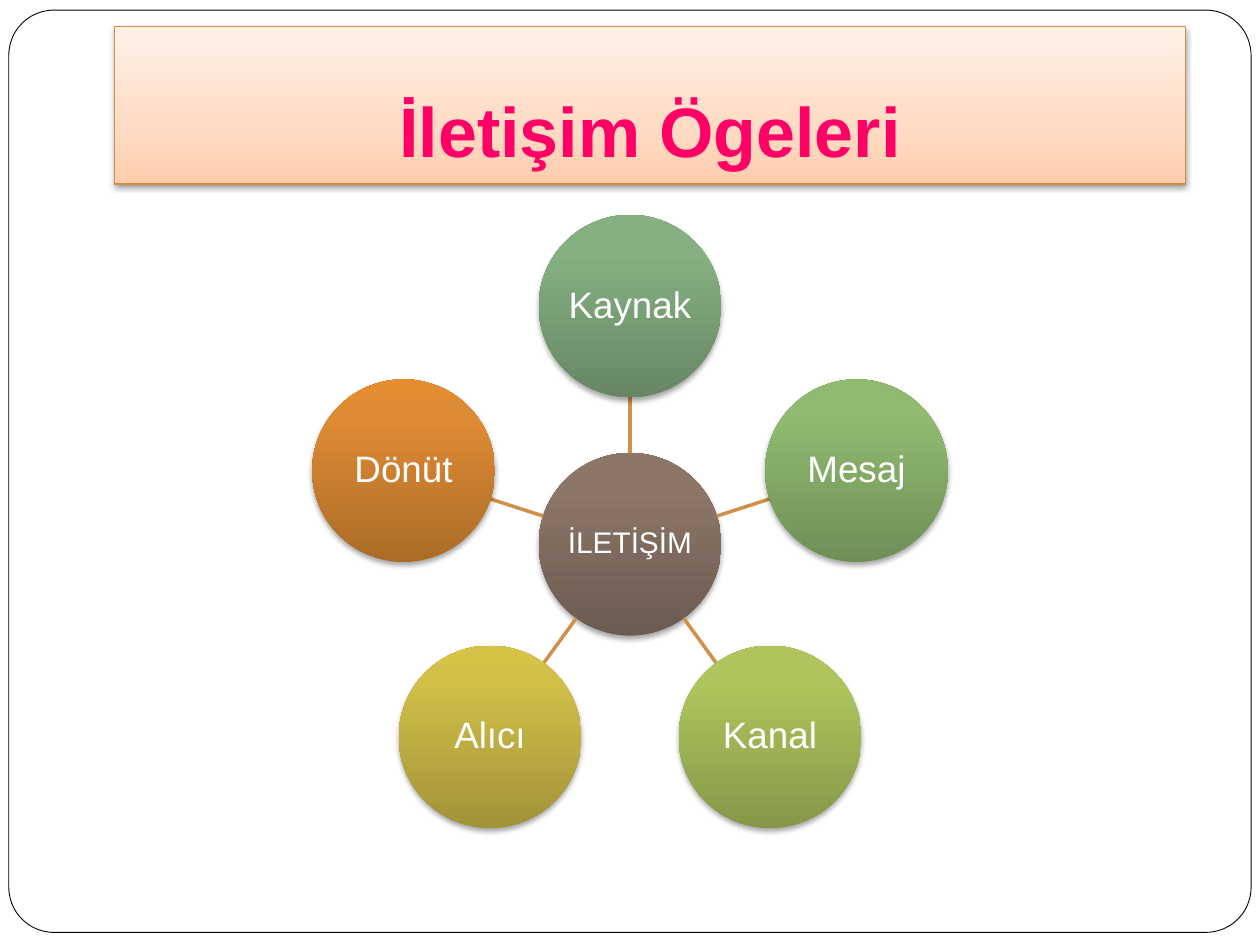
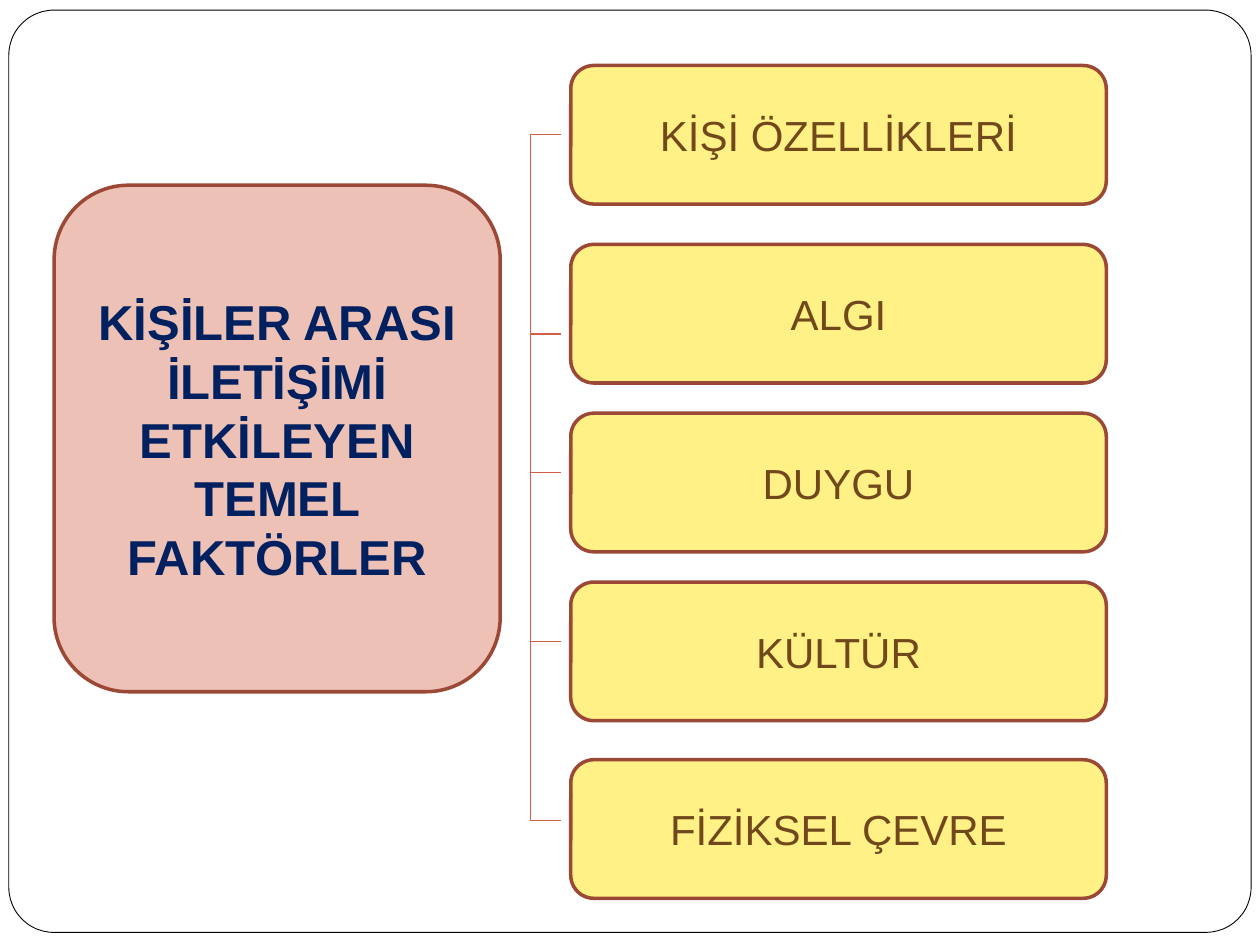
from copy import deepcopy
from dataclasses import dataclass
from math import cos, radians, sin

from lxml.etree import SubElement
from pptx import Presentation
from pptx.dml.color import RGBColor
from pptx.enum.shapes import MSO_CONNECTOR, MSO_SHAPE
from pptx.enum.text import MSO_ANCHOR, PP_ALIGN
from pptx.oxml.ns import qn
from pptx.util import Inches, Pt


@dataclass(frozen=True)
class Theme:
    font: str = "Arial"
    white: str = "FFFFFF"
    frame_line: str = "000000"
    shadow: str = "000000"
    title_text: str = "FF0066"
    title_line: str = "D08D44"
    title_fill: tuple = ((0, "FFCDAC"), (0.35, "FFDBC4"), (1, "FFF1E8"))
    hub_fill: tuple = ((0, "6C5B50"), (0.8, "8C7668"), (1, "8D7768"))
    spoke: str = "D19049"
    topic_fill: str = "EDC1B6"
    topic_text: str = "002060"
    factor_fill: str = "FFF185"
    factor_text: str = "71481C"
    box_line: str = "9B4936"
    bracket: str = "D05F44"
    title_size: int = 40
    topic_size: int = 28
    factor_size: int = 24
    element_size: int = 21
    hub_size: int = 17
    thin: float = 0.5
    fine: float = 0.75
    thick: float = 2


THEME = Theme()

# Clockwise from the top
ELEMENTS = [
    ("Kaynak", ((0, "678764"), (0.8, "86B082"), (1, "86B182"))),
    ("Mesaj", ((0, "6F8F56"), (0.8, "90BA70"), (1, "90BC6F"))),
    ("Kanal", ((0, "869848"), (0.8, "AEC55D"), (1, "B0C85B"))),
    ("Alıcı", ((0, "A19338"), (0.8, "D1BF48"), (1, "D5C246"))),
    ("Dönüt", ((0, "AB6C27"), (0.8, "DE8C33"), (1, "E38D30"))),
]

# Label, top of its box, height of its bracket arm
FACTORS = [
    ("KİŞİ ÖZELLİKLERİ", 0.52, 1.07),
    ("ALGI", 1.94, 2.65),
    ("DUYGU", 3.28, 3.75),
    ("KÜLTÜR", 4.62, 5.09),
    ("FİZİKSEL ÇEVRE", 6.03, 6.51),
]


def apply_format(target, values):
    for name, value in values.items():
        setattr(target, name, value)


def fill_gradient(shape, stops):
    """Fill from bottom to top with (position, colour) stops."""
    shape.fill.gradient()
    shape.fill.gradient_angle = 90
    stop_list = next(shape._element.spPr.iter(qn("a:gsLst")))
    while len(stop_list) < len(stops):
        stop_list.append(deepcopy(stop_list[-1]))
    for stop, (position, colour) in zip(shape.fill.gradient_stops, stops):
        stop.position = position
        stop.color.rgb = RGBColor.from_string(colour)


def add_shadow(shape, opacity, distance):
    effects = shape._element.spPr.find(qn("a:effectLst"))
    shadow = SubElement(effects, qn("a:outerShdw"), blurRad=str(Pt(3.1)),
                        dist=str(Pt(distance)), dir="5400000", rotWithShape="0")
    colour = SubElement(shadow, qn("a:srgbClr"), val=THEME.shadow)
    SubElement(colour, qn("a:alpha"), val=str(opacity * 1000))


def add_box(page, kind, place, fill, line=None, width=THEME.thick):
    """Add a shape; fill is one colour or a tuple of gradient stops."""
    box = page.shapes.add_shape(kind, *map(Inches, place))
    box.shadow.inherit = False
    if isinstance(fill, tuple):
        fill_gradient(box, fill)
    else:
        box.fill.solid()
        box.fill.fore_color.rgb = RGBColor.from_string(fill)
    if line:
        box.line.color.rgb = RGBColor.from_string(line)
        box.line.width = Pt(width)
    else:
        box.line.fill.background()
    return box


def write_text(box, text, size, colour, bold=False, spacing=1.0, **frame_format):
    frame = box.text_frame
    apply_format(frame, {"word_wrap": True, "vertical_anchor": MSO_ANCHOR.MIDDLE,
                         **frame_format})
    para = frame.paragraphs[0]
    apply_format(para, {"alignment": PP_ALIGN.CENTER, "line_spacing": spacing})
    span = para.add_run()
    span.text = text
    apply_format(span.font, {"name": THEME.font, "size": Pt(size), "bold": bold})
    span.font.color.rgb = RGBColor.from_string(colour)


def add_line(page, start, end, colour, width):
    line = page.shapes.add_connector(MSO_CONNECTOR.STRAIGHT,
                                     *map(Inches, (*start, *end)))
    line.line.color.rgb = RGBColor.from_string(colour)
    line.line.width = Pt(width)
    SubElement(line._element.spPr, qn("a:effectLst"))


def add_framed_page(deck):
    page = deck.slides.add_slide(deck.slide_layouts[6])
    frame = add_box(page, MSO_SHAPE.ROUNDED_RECTANGLE, (0.07, 0.08, 9.86, 7.32),
                    THEME.white, THEME.frame_line, THEME.thin)
    frame.adjustments[0] = 0.049
    return page


def add_title(page, text):
    band = add_box(page, MSO_SHAPE.RECTANGLE, (0.91, 0.21, 8.5, 1.25),
                   THEME.title_fill, THEME.title_line, THEME.fine)
    add_shadow(band, 38, 1.6)
    write_text(band, text, THEME.title_size, THEME.title_text, bold=True,
               vertical_anchor=MSO_ANCHOR.BOTTOM, margin_bottom=Inches(0.1))


def add_circle(page, centre, diameter, text, size, fill):
    left, top = (middle - diameter / 2 for middle in centre)
    circle = add_box(page, MSO_SHAPE.OVAL, (left, top, diameter, diameter), fill)
    add_shadow(circle, 35, 1.8)
    sides = ("left", "right", "top", "bottom")
    margins = {f"margin_{side}": Inches(0.01) for side in sides}
    write_text(circle, text, size, THEME.white, spacing=0.9, **margins)


def add_radial_diagram(page, hub_text, elements):
    hub, diameter, orbit = (5, 4.32), 1.45, 1.89

    def point_at(angle, distance):
        return (hub[0] + distance * sin(angle), hub[1] - distance * cos(angle))

    add_circle(page, hub, diameter, hub_text, THEME.hub_size, THEME.hub_fill)
    for index, (text, fill) in enumerate(elements):
        angle = radians(index * 360 / len(elements))
        add_line(page, point_at(angle, diameter / 2),
                 point_at(angle, orbit - diameter / 2), THEME.spoke, THEME.thick)
        add_circle(page, point_at(angle, orbit), diameter, text,
                   THEME.element_size, fill)


def add_rounded_box(page, place, text, fill, size, colour, bold=False):
    box = add_box(page, MSO_SHAPE.ROUNDED_RECTANGLE, place, fill, THEME.box_line)
    write_text(box, text, size, colour, bold)


def add_bracket(page, left, right, arms):
    """Draw a vertical line with one arm to the right at each height."""
    add_line(page, (left, arms[0]), (left, arms[-1]), THEME.bracket, THEME.fine)
    for arm in arms:
        add_line(page, (left, arm), (right, arm), THEME.bracket, THEME.fine)


def build_elements_page(deck):
    page = add_framed_page(deck)
    add_title(page, "İletişim Ögeleri")
    add_radial_diagram(page, "İLETİŞİM", ELEMENTS)


def build_factors_page(deck):
    page = add_framed_page(deck)
    for text, top, _ in FACTORS:
        add_rounded_box(page, (4.53, top, 4.25, 1.1), text, THEME.factor_fill,
                        THEME.factor_size, THEME.factor_text)
    add_rounded_box(page, (0.43, 1.47, 3.54, 4.02),
                    "KİŞİLER ARASI İLETİŞİMİ ETKİLEYEN TEMEL FAKTÖRLER",
                    THEME.topic_fill, THEME.topic_size, THEME.topic_text, bold=True)
    add_bracket(page, 4.21, 4.45, [arm for _, _, arm in FACTORS])


def main():
    deck = Presentation()
    apply_format(deck, {"slide_width": Inches(10), "slide_height": Inches(7.5)})
    build_elements_page(deck)
    build_factors_page(deck)
    deck.save("out.pptx")


if __name__ == "__main__":
    main()
